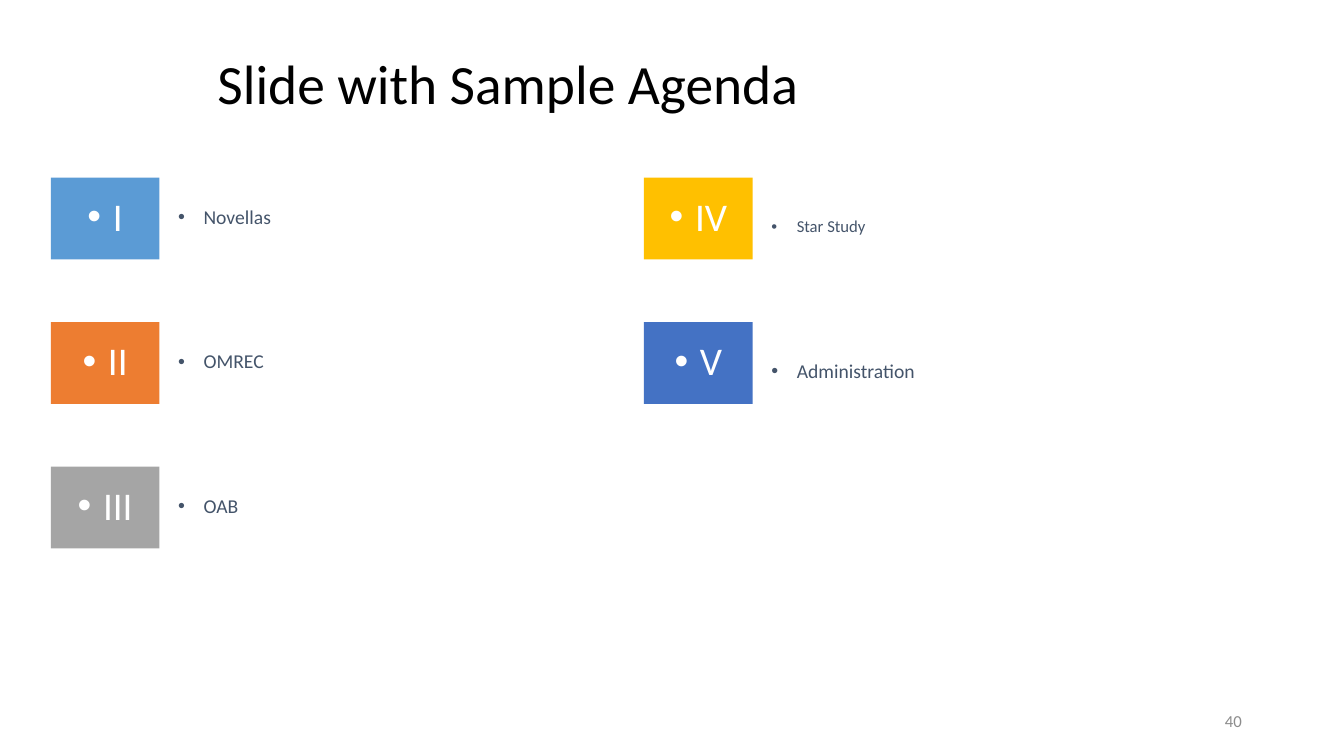
from dataclasses import dataclass

from lxml import etree
from pptx import Presentation
from pptx.dml.color import RGBColor
from pptx.enum.shapes import MSO_SHAPE
from pptx.enum.text import MSO_ANCHOR, PP_ALIGN
from pptx.oxml.ns import qn
from pptx.util import Cm, Pt

RECTANGLE = MSO_SHAPE.RECTANGLE
MIDDLE = MSO_ANCHOR.MIDDLE
LEFT, CENTER, RIGHT = PP_ALIGN.LEFT, PP_ALIGN.CENTER, PP_ALIGN.RIGHT


@dataclass(frozen=True)
class Theme:
    """Hold the colours and type sizes of the slide."""
    font: str = "Calibri"
    title: str = "000000"
    label: str = "44546A"
    numeral: str = "FFFFFF"
    page: str = "8C8C8C"
    title_size: float = 39.6
    numeral_size: float = 28
    label_size: float = 14
    small_size: float = 11.9
    page_size: float = 12


THEME = Theme()

AGENDA_COLUMNS = [
    [("I", "Novellas", "5B9BD5", THEME.label_size),
     ("II", "OMREC", "ED7D31", THEME.label_size),
     ("III", "OAB", "A5A5A5", THEME.label_size)],
    [("IV", "Star Study", "FFC000", THEME.small_size),
     ("V", "Administration", "4472C4", THEME.label_size)],
]


def write_text(shape, text, *, size, color, align=LEFT, spacing=0.9,
               bullet=False, top_inset=0.13):
    """Write one formatted paragraph, vertically centred in the shape."""
    frame = shape.text_frame
    frame.word_wrap = True
    frame.vertical_anchor = MIDDLE
    frame.margin_left = frame.margin_right = Cm(0.25)
    frame.margin_top, frame.margin_bottom = Cm(top_inset), Cm(0.13)
    paragraph = frame.paragraphs[0]
    paragraph.alignment = align
    paragraph.line_spacing = spacing
    run = paragraph.add_run()
    run.text = text
    run.font.name = THEME.font
    run.font.size = Pt(size)
    run.font.color.rgb = RGBColor.from_string(color)
    if bullet:
        paragraph.space_before = Pt(10)
        properties = paragraph._p.get_or_add_pPr()
        properties.set("marL", str(Cm(0.64)))
        properties.set("indent", str(Cm(-0.64)))
        etree.SubElement(properties, qn("a:buFont")).set("typeface", "Arial")
        etree.SubElement(properties, qn("a:buChar")).set("char", "•")


def add_text(slide, text, left, top, width, height, **text_format):
    """Add a text box, measured in centimetres."""
    box = slide.shapes.add_textbox(Cm(left), Cm(top), Cm(width), Cm(height))
    write_text(box, text, **text_format)


def add_agenda_item(slide, item, left, top, top_inset):
    """Add a coloured numeral block with its label to the right."""
    numeral, label, color, label_size = item
    block = slide.shapes.add_shape(RECTANGLE, Cm(left), Cm(top), Cm(2.74), Cm(2.06))
    block.shadow.inherit = False
    block.fill.solid()
    block.fill.fore_color.rgb = RGBColor.from_string(color)
    block.line.fill.background()
    write_text(block, numeral, size=THEME.numeral_size, color=THEME.numeral,
               align=CENTER, bullet=True)
    add_text(slide, label, left + 2.96, top - 0.04, 9.22, 2.11, size=label_size,
             color=THEME.label, bullet=True, top_inset=top_inset)


def add_agenda(slide, left, top, column_step, row_step):
    """Lay out the agenda columns on a regular grid."""
    label_insets = (0.13, 0.6)
    for column, (items, inset) in enumerate(zip(AGENDA_COLUMNS, label_insets)):
        for row, item in enumerate(items):
            add_agenda_item(slide, item, left + column * column_step,
                            top + row * row_step, inset)


def build_agenda_slide(presentation):
    """Build the agenda slide with title, items and page number."""
    slide = presentation.slides.add_slide(presentation.slide_layouts[6])
    add_text(slide, "Slide with Sample Agenda", 5.23, 1.24, 28.6, 1.9,
             size=THEME.title_size, color=THEME.title)
    add_text(slide, "40", 23.93, 17.65, 7.62, 1.02, size=THEME.page_size,
             color=THEME.page, align=RIGHT, spacing=1.0)
    add_agenda(slide, left=1.28, top=4.48, column_step=14.95, row_step=3.64)


def main():
    """Create and save the presentation."""
    presentation = Presentation()
    presentation.slide_width, presentation.slide_height = Cm(33.87), Cm(19.05)
    build_agenda_slide(presentation)
    presentation.save("out.pptx")


if __name__ == "__main__":
    main()
